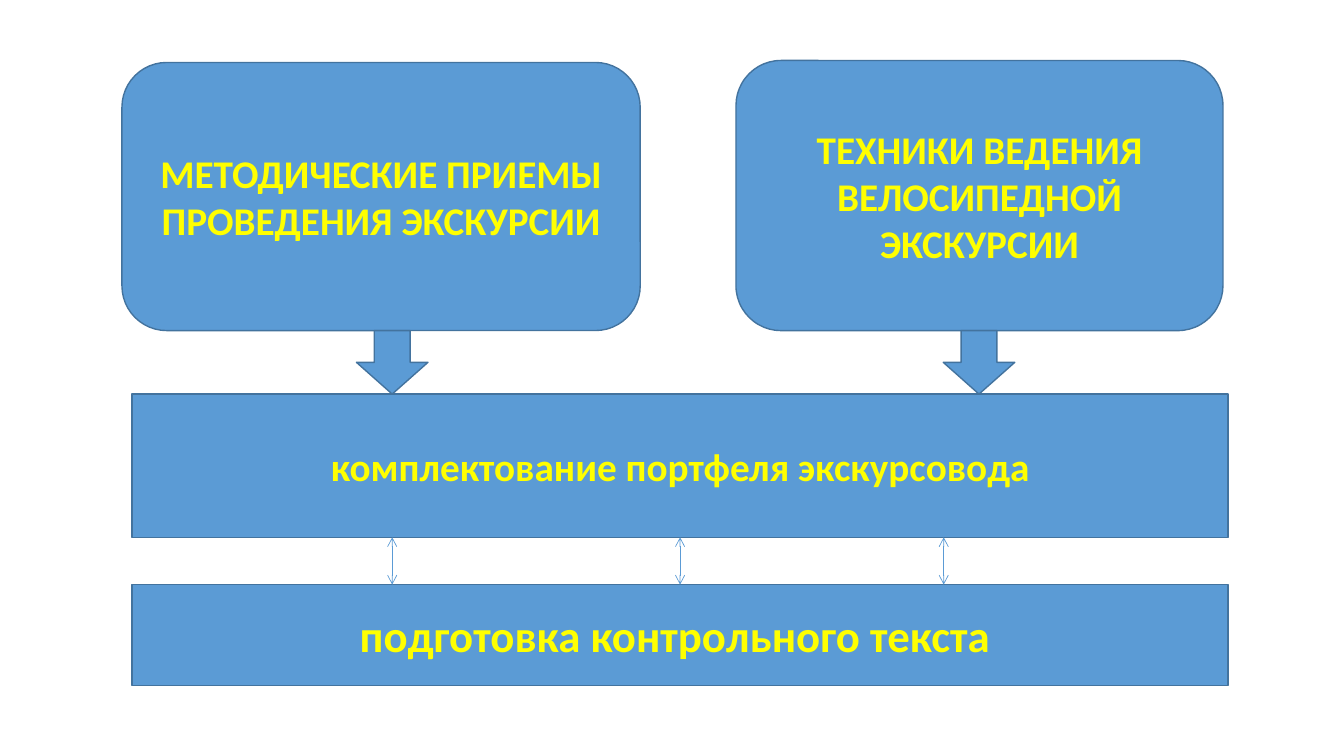
from dataclasses import dataclass

from lxml import etree
from pptx import Presentation
from pptx.dml.color import RGBColor
from pptx.enum.shapes import MSO_CONNECTOR, MSO_SHAPE
from pptx.enum.text import MSO_ANCHOR, PP_ALIGN
from pptx.oxml.ns import qn
from pptx.util import Inches, Pt

ROUNDED = MSO_SHAPE.ROUNDED_RECTANGLE
RECTANGLE = MSO_SHAPE.RECTANGLE
DOWN_ARROW = MSO_SHAPE.DOWN_ARROW
STRAIGHT = MSO_CONNECTOR.STRAIGHT
MIDDLE = MSO_ANCHOR.MIDDLE
CENTER = PP_ALIGN.CENTER
TOP_SIDE, BOTTOM_SIDE = 0, 2


@dataclass(frozen=True)
class Theme:
    fill: RGBColor = RGBColor(0x5B, 0x9B, 0xD5)
    outline: RGBColor = RGBColor(0x43, 0x73, 0x9E)
    text: RGBColor = RGBColor(0xFF, 0xFF, 0x00)
    font: str = "Calibri"
    body_size: int = 28
    large_size: int = 32
    outline_width: float = 1
    link_width: float = 0.5


THEME = Theme()


def add_block(page, preset, box, text="", size=THEME.body_size):
    """Draw a filled shape with optional centred text."""
    shape = page.shapes.add_shape(preset, *map(Inches, box))
    shape.shadow.inherit = False
    shape.fill.solid()
    shape.fill.fore_color.rgb = THEME.fill
    shape.line.color.rgb = THEME.outline
    shape.line.width = Pt(THEME.outline_width)
    if text:
        frame = shape.text_frame
        frame.word_wrap = True
        frame.vertical_anchor = MIDDLE
        para = frame.paragraphs[0]
        para.alignment = CENTER
        span = para.add_run()
        span.text = text
        span.font.color.rgb = THEME.text
        font_format = {"name": THEME.font, "size": Pt(size), "bold": True}
        for name, value in font_format.items():
            setattr(span.font, name, value)
    return shape


def add_link(page, x, top, bottom):
    """Draw a thin vertical line with an open arrowhead at each end."""
    link = page.shapes.add_connector(
        STRAIGHT, Inches(x), Inches(top), Inches(x), Inches(bottom))
    link.line.color.rgb = THEME.fill
    link.line.width = Pt(THEME.link_width)
    outline = link.line._get_or_add_ln()
    for end in ("a:headEnd", "a:tailEnd"):
        etree.SubElement(outline, qn(end), type="arrow")
    etree.SubElement(link._element.spPr, qn("a:effectLst"))
    return link


def add_sources(page, blocks, arrow_centers, bar_top):
    """Draw the rounded blocks and the arrows leading down to the bar."""
    arrow_width = 0.71
    for (box, text), center in zip(blocks, arrow_centers):
        add_block(page, ROUNDED, box, text)
        bottom = box[1] + box[3]
        add_block(page, DOWN_ARROW, (center - arrow_width / 2, bottom,
                                     arrow_width, bar_top - bottom))


def add_stages(page, box, upper_height, lower_height, side_links):
    """Draw two full-width bars joined by double-headed links."""
    left, top, width, height = box
    upper_bottom = top + upper_height
    lower_top = top + height - lower_height
    upper = add_block(page, RECTANGLE, (left, top, width, upper_height),
                      "комплектование портфеля экскурсовода")
    lower = add_block(page, RECTANGLE, (left, lower_top, width, lower_height),
                      "подготовка контрольного текста ", THEME.large_size)
    middle_link = add_link(page, left + width / 2, upper_bottom, lower_top)
    middle_link.begin_connect(upper, BOTTOM_SIDE)
    middle_link.end_connect(lower, TOP_SIDE)
    for x in side_links:
        add_link(page, x, upper_bottom, lower_top)


def main():
    deck = Presentation()
    deck.slide_width, deck.slide_height = Inches(13.33), Inches(7.5)
    blank_layout = deck.slide_layouts[6]
    page = deck.slides.add_slide(blank_layout)

    # Upper region: methods and techniques
    blocks = [
        ((1.21, 0.62, 5.14, 2.66), "МЕТОДИЧЕСКИЕ ПРИЕМЫ ПРОВЕДЕНИЯ ЭКСКУРСИИ"),
        ((7.3, 0.6, 4.83, 2.68), "ТЕХНИКИ ВЕДЕНИЯ ВЕЛОСИПЕДНОЙ ЭКСКУРСИИ"),
    ]
    stages_box = (1.31, 3.91, 10.87, 2.89)
    add_sources(page, blocks, (3.89, 9.71), stages_box[1])

    # Lower region: stages that follow
    add_stages(page, stages_box, 1.42, 1, side_links=(3.89, 9.36))

    deck.save("out.pptx")


if __name__ == "__main__":
    main()
